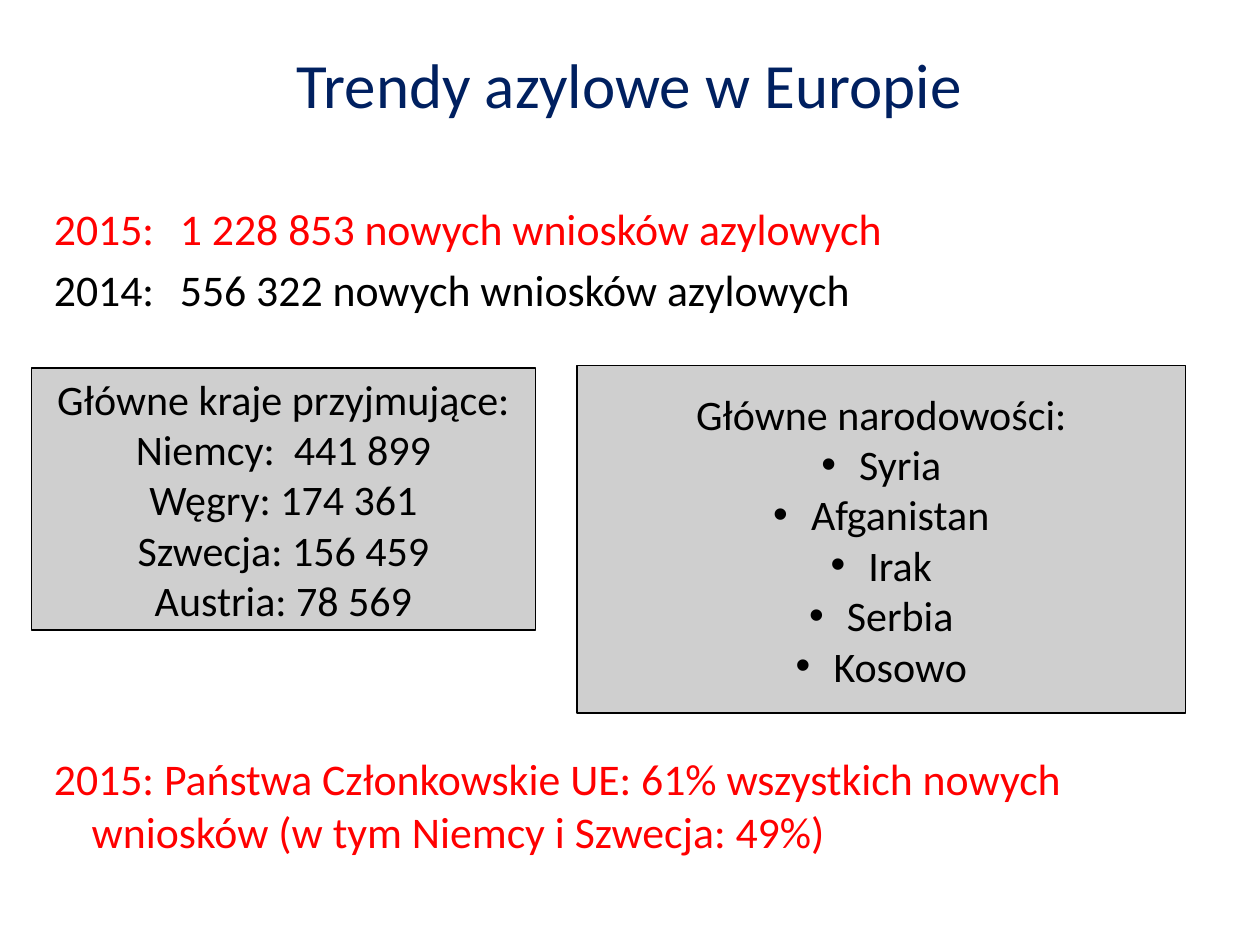
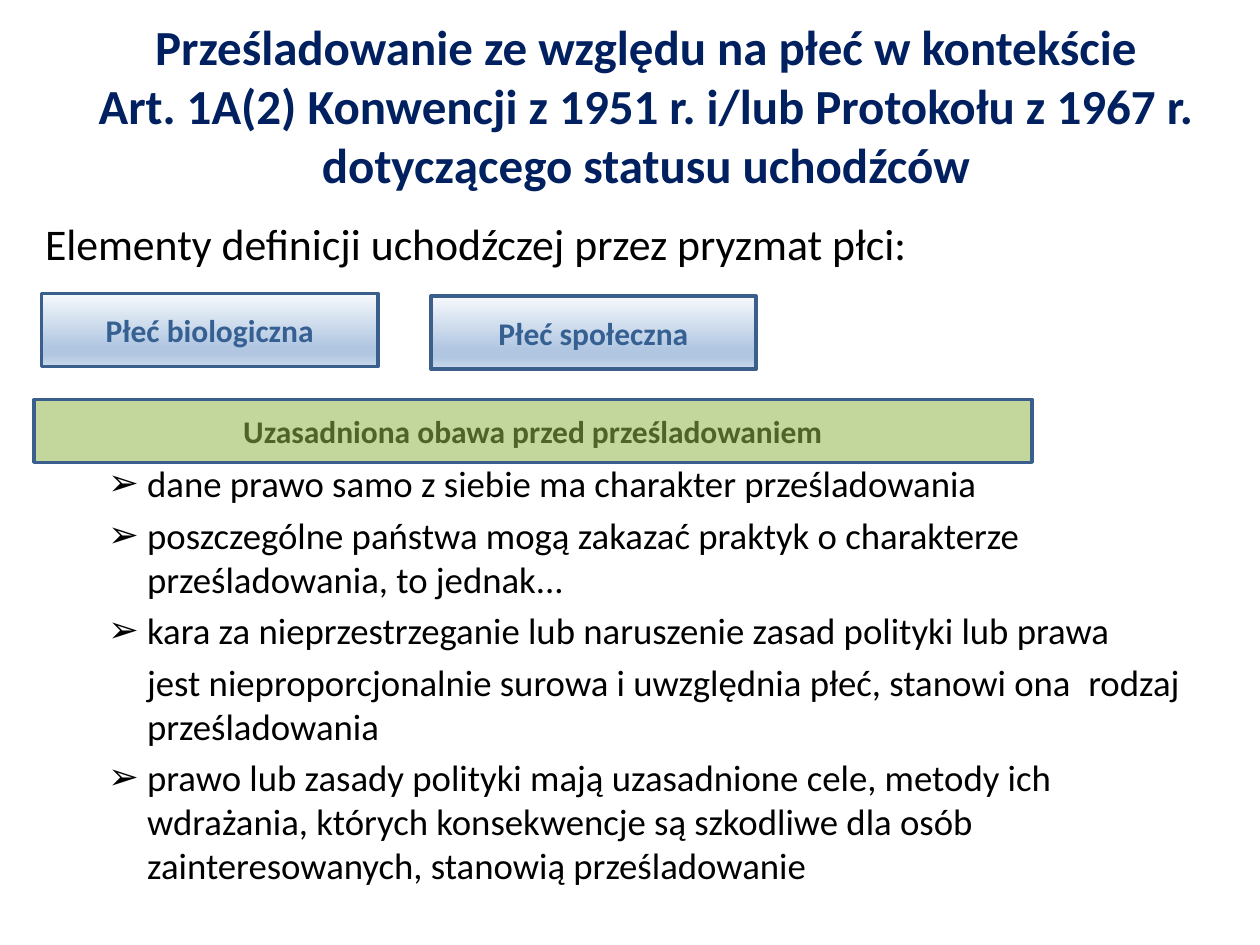
"""Build two slides on asylum trends and gender-based persecution."""
from lxml.etree import SubElement
from pptx import Presentation
from pptx.dml.color import RGBColor
from pptx.enum.shapes import MSO_SHAPE
from pptx.enum.text import MSO_ANCHOR, MSO_AUTO_SIZE, PP_ALIGN
from pptx.oxml.ns import qn
from pptx.util import Pt

EMU_PER_PX = 9144
FONT = "Calibri"
NAVY, RED, BLACK = "002060", "FF0000", "000000"
GREY, GREEN, OLIVE = "CFCFCF", "C3D69B", "4F6228"
BLUE_EDGE, BLUE_TEXT = "3A5F8C", "376092"
BLUE_FADE = [(0, "F6F9FC"), (74, "B0C6E1"), (83, "B0C6E1"), (100, "CAD9EB")]


def px(length):
    return length * EMU_PER_PX


def rgb(value):
    return RGBColor.from_string(value)


def write(frame, text, size=25, color=BLACK, bold=False, align=PP_ALIGN.LEFT,
          before=0.0, margin=0, hang=0, bullet=None, tab=None, tab_step=None):
    first = frame.paragraphs[0]
    paragraph = frame.add_paragraph() if first.runs else first
    paragraph.text = text
    paragraph.alignment = align
    paragraph.space_before = Pt(before * size)
    for run in paragraph.runs:
        run.font.name = FONT
        run.font.size = Pt(size)
        run.font.bold = bold
        run.font.color.rgb = rgb(color)
    properties = paragraph._p.get_or_add_pPr()
    properties.set("marL", str(px(margin)))
    properties.set("indent", str(px(-hang)))
    if tab_step:
        properties.set("defTabSz", str(px(tab_step)))
    if bullet:
        SubElement(properties, qn("a:buFont"), typeface="Arial")
        SubElement(properties, qn("a:buChar"), char=bullet)
    else:
        SubElement(properties, qn("a:buNone"))
    if tab:
        stops = SubElement(properties, qn("a:tabLst"))
        SubElement(stops, qn("a:tab"), pos=str(px(tab)), algn="l")


class Deck:
    """Hold the shared style and the slide being filled."""

    def __init__(self):
        self.presentation = Presentation()
        self.presentation.slide_width = px(1000)
        self.presentation.slide_height = px(750)
        self.slide = None

    def start(self, title, left, top, width, height, **style):
        layout = self.presentation.slide_layouts[5]
        self.slide = self.presentation.slides.add_slide(layout)
        heading = self.slide.shapes.title
        heading.left, heading.top = px(left), px(top)
        heading.width, heading.height = px(width), px(height)
        frame = heading.text_frame
        frame.auto_size = MSO_AUTO_SIZE.NONE
        frame.vertical_anchor = MSO_ANCHOR.MIDDLE
        write(frame, title, color=NAVY, align=PP_ALIGN.CENTER, **style)

    def text(self, left, top, width, height):
        frame = self.slide.shapes.add_textbox(
            px(left), px(top), px(width), px(height)).text_frame
        frame.word_wrap = True
        return frame

    def panel(self, left, top, width, height, fill, edge, weight):
        panel = self.slide.shapes.add_shape(
            MSO_SHAPE.RECTANGLE, px(left), px(top), px(width), px(height))
        panel.shadow.inherit = False
        panel.line.color.rgb = rgb(edge)
        panel.line.width = Pt(weight)
        if isinstance(fill, str):
            panel.fill.solid()
            panel.fill.fore_color.rgb = rgb(fill)
        else:
            self.fade(panel, fill)
        frame = panel.text_frame
        frame.word_wrap = True
        frame.vertical_anchor = MSO_ANCHOR.MIDDLE
        return frame

    def fade(self, panel, colors):
        panel.fill.gradient()
        panel.fill.gradient_angle = 270
        stops = panel._element.spPr.find(".//" + qn("a:gsLst"))
        for stop in list(stops):
            stops.remove(stop)
        for percent, color in colors:
            stop = SubElement(stops, qn("a:gs"), pos=str(percent * 1000))
            SubElement(stop, qn("a:srgbClr"), val=color)

    def list_panel(self, left, top, width, height, heading, items, **style):
        frame = self.panel(left, top, width, height, GREY, BLACK, 0.75)
        write(frame, heading, size=24, align=PP_ALIGN.CENTER)
        for item in items:
            write(frame, item, size=24, align=PP_ALIGN.CENTER, **style)

    def label(self, left, top, width, height, text, fill, color):
        frame = self.panel(left, top, width, height, fill, BLUE_EDGE, 2)
        write(frame, text, size=18, color=color, bold=True, align=PP_ALIGN.CENTER)


def add_trends(deck):
    deck.start("Trendy azylowe w Europie", 33, 25, 933, 82, size=36)
    totals = deck.text(33, 155, 930, 105)
    write(totals, "2015:\t1 228 853 nowych wniosków azylowych", color=RED, tab=96)
    write(totals, "2014:\t556 322 nowych wniosków azylowych", before=0.2, tab=127)
    deck.list_panel(25, 292, 400, 208, "Główne kraje przyjmujące:",
                    ["Niemcy:  441 899", "Węgry: 174 361",
                     "Szwecja: 156 459", "Austria: 78 569"])
    deck.list_panel(458, 290, 483, 276, "Główne narodowości:",
                    ["Syria", "Afganistan", "Irak", "Serbia", "Kosowo"],
                    margin=30, hang=30, bullet="•")
    share = deck.text(33, 592, 930, 100)
    write(share, "2015: Państwa Członkowskie UE: 61% wszystkich nowych "
                 "wniosków (w tym Niemcy i Szwecja: 49%)",
          color=RED, margin=30, hang=30)


def add_persecution(deck):
    deck.start("Prześladowanie ze względu na płeć w kontekście\n"
               "Art. 1A(2) Konwencji z 1951 r. i/lub Protokołu z 1967 r. "
               "dotyczącego statusu uchodźców", 33, 0, 959, 167, size=28, bold=True)
    write(deck.text(26, 167, 930, 55),
          "Elementy definicji uchodźczej przez pryzmat płci:")
    forms = deck.text(26, 361, 930, 360)
    point = {"size": 21, "before": 0.2, "margin": 81}
    arrow = {"hang": 31, "bullet": "➢", **point}
    write(forms, "dane prawo samo z siebie ma charakter prześladowania",
          **{**arrow, "before": 0})
    write(forms, "poszczególne państwa mogą zakazać praktyk o charakterze "
                 "prześladowania, to jednak...", **arrow)
    write(forms, "kara za nieprzestrzeganie lub naruszenie zasad polityki "
                 "lub prawa", **arrow)
    write(forms, "jest nieproporcjonalnie surowa i uwzględnia płeć, stanowi ona "
                 "\trodzaj prześladowania", tab_step=83, **point)
    write(forms, "prawo lub zasady polityki mają uzasadnione cele, metody ich "
                 "wdrażania, których konsekwencje są szkodliwe dla osób "
                 "zainteresowanych, stanowią prześladowanie", **arrow)
    deck.label(342, 235, 258, 58, "Płeć społeczna", BLUE_FADE, BLUE_TEXT)
    deck.label(33, 233, 267, 58, "Płeć biologiczna", BLUE_FADE, BLUE_TEXT)
    deck.label(27, 317, 792, 50, "Uzasadniona obawa przed prześladowaniem",
               GREEN, OLIVE)


def main():
    deck = Deck()
    add_trends(deck)
    add_persecution(deck)
    deck.presentation.save("out.pptx")


if __name__ == "__main__":
    main()
